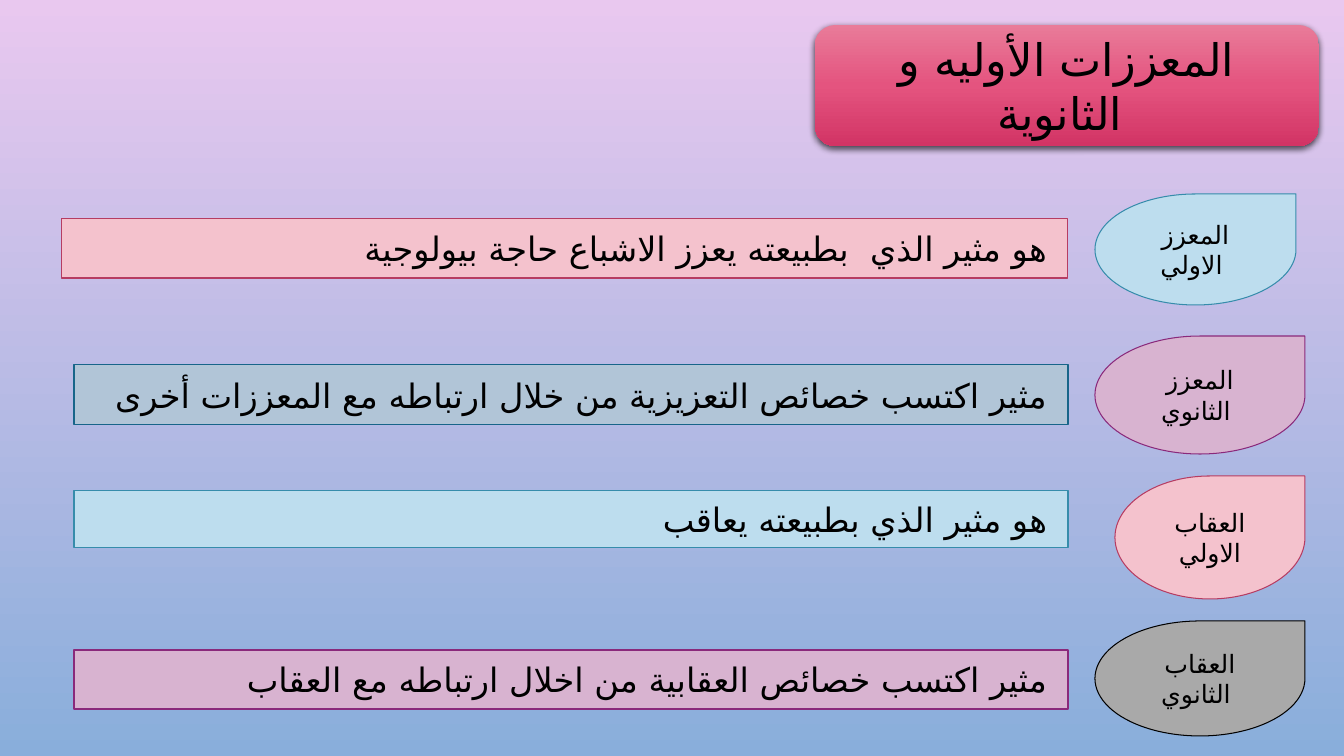
from lxml import etree
from pptx import Presentation
from pptx.dml.color import RGBColor
from pptx.enum.shapes import MSO_SHAPE
from pptx.enum.text import MSO_ANCHOR, PP_ALIGN
from pptx.oxml.ns import qn
from pptx.util import Emu, Pt

TEARDROP = MSO_SHAPE.TEAR
BAR = MSO_SHAPE.FLOWCHART_PROCESS
TITLE_BOX = MSO_SHAPE.FLOWCHART_ALTERNATE_PROCESS
CENTER, RIGHT = PP_ALIGN.CENTER, PP_ALIGN.RIGHT
MIDDLE = MSO_ANCHOR.MIDDLE

FONT = "Calibri"
ARABIC_FONT = "DejaVu Sans"
TEXT_COLOR = "000000"
COLORS = {  # fill, line
    "blue": ("BDDDEE", "368CAB"),
    "pink": ("F4C2CD", "B63C62"),
    "purple": ("D8B3D0", "8A297B"),
    "steel": ("B1C5D7", "176589"),
    "gray": ("A9A9A9", "000000"),
}
GRADIENTS = {  # position in percent, color
    "background": [(0, "E9C8EF"), (100, "89AEDB")],
    "title": [(0, "E97B99"), (50, "E4547F"), (100, "D23465")],
}

TITLE = "المعززات الأوليه و الثانوية "
# term, color, (left, top, width, height); definition, color, (left, top, height)
ROWS = [
    ("المعزز الاولي ", "blue", (1095, 194, 201, 111),
     "هو مثير الذي  بطبيعته يعزز الاشباع حاجة بيولوجية ", "pink", (62, 219, 59)),
    ("المعزز الثانوي ", "purple", (1095, 336, 210, 118),
     "مثير اكتسب خصائص التعزيزية من خلال ارتباطه مع المعززات أخرى ", "steel", (74, 365, 60)),
    ("العقاب الاولي", "pink", (1115, 476, 190, 123),
     "هو مثير الذي بطبيعته يعاقب ", "blue", (74, 491, 57)),
    ("العقاب الثانوي ", "gray", (1095, 621, 210, 115),
     "مثير اكتسب خصائص العقابية من اخلال ارتباطه مع العقاب ", "purple", (74, 650, 59)),
]
BAR_RIGHT = 1068


def px(length):
    return Emu(round(length * 914400 / 100.8))


def apply_gradient(fill, element, stops):
    """Fill from top to bottom; element is the XML that holds the fill."""
    fill.gradient()
    fill.gradient_angle = 270
    stop_list = next(element.iter(qn("a:gsLst")))
    for stop in list(stop_list):
        stop_list.remove(stop)
    for position, color in stops:
        stop = etree.SubElement(stop_list, qn("a:gs"), pos=str(position * 1000))
        etree.SubElement(stop, qn("a:srgbClr"), val=color)


def add_label(slide, kind, box, text, size, align):
    label = slide.shapes.add_shape(kind, *map(px, box))
    label.shadow.inherit = False
    frame = label.text_frame
    frame.word_wrap = True
    frame.vertical_anchor = MIDDLE
    paragraph = frame.paragraphs[0]
    paragraph.text = text
    paragraph.alignment = align
    font = paragraph.font
    font.size = Pt(size)
    font.name = FONT
    font.color.rgb = RGBColor.from_string(TEXT_COLOR)
    # Arabic letters take the complex-script typeface
    defaults = next(label._element.iter(qn("a:defRPr")))
    etree.SubElement(defaults, qn("a:cs"), typeface=ARABIC_FONT)
    return label


def paint(label, color):
    fill, line = COLORS[color]
    label.fill.solid()
    label.fill.fore_color.rgb = RGBColor.from_string(fill)
    label.line.color.rgb = RGBColor.from_string(line)
    label.line.width = Pt(0.75)


def add_drop_shadow(label):
    effects = next(label._element.iter(qn("a:effectLst")))
    shadow = etree.SubElement(effects, qn("a:outerShdw"), blurRad=str(Pt(5)),
                              dist=str(Pt(2)), dir="5400000", rotWithShape="0")
    color = etree.SubElement(shadow, qn("a:srgbClr"), val="000000")
    etree.SubElement(color, qn("a:alpha"), val="69000")


def main():
    deck = Presentation()
    deck.slide_width, deck.slide_height = px(1344), px(756)
    slide = deck.slides.add_slide(deck.slide_layouts[6])
    apply_gradient(slide.background.fill, slide._element, GRADIENTS["background"])

    title = add_label(slide, TITLE_BOX, (815, 25, 504, 121), TITLE, 32, CENTER)
    apply_gradient(title.fill, title._element, GRADIENTS["title"])
    title.line.fill.background()
    add_drop_shadow(title)

    for term, term_color, drop_box, definition, bar_color, (left, top, height) in ROWS:
        paint(add_label(slide, TEARDROP, drop_box, term, 18, CENTER), term_color)
        bar_box = (left, top, BAR_RIGHT - left, height)
        paint(add_label(slide, BAR, bar_box, definition, 24, RIGHT), bar_color)

    deck.save("out.pptx")


if __name__ == "__main__":
    main()
